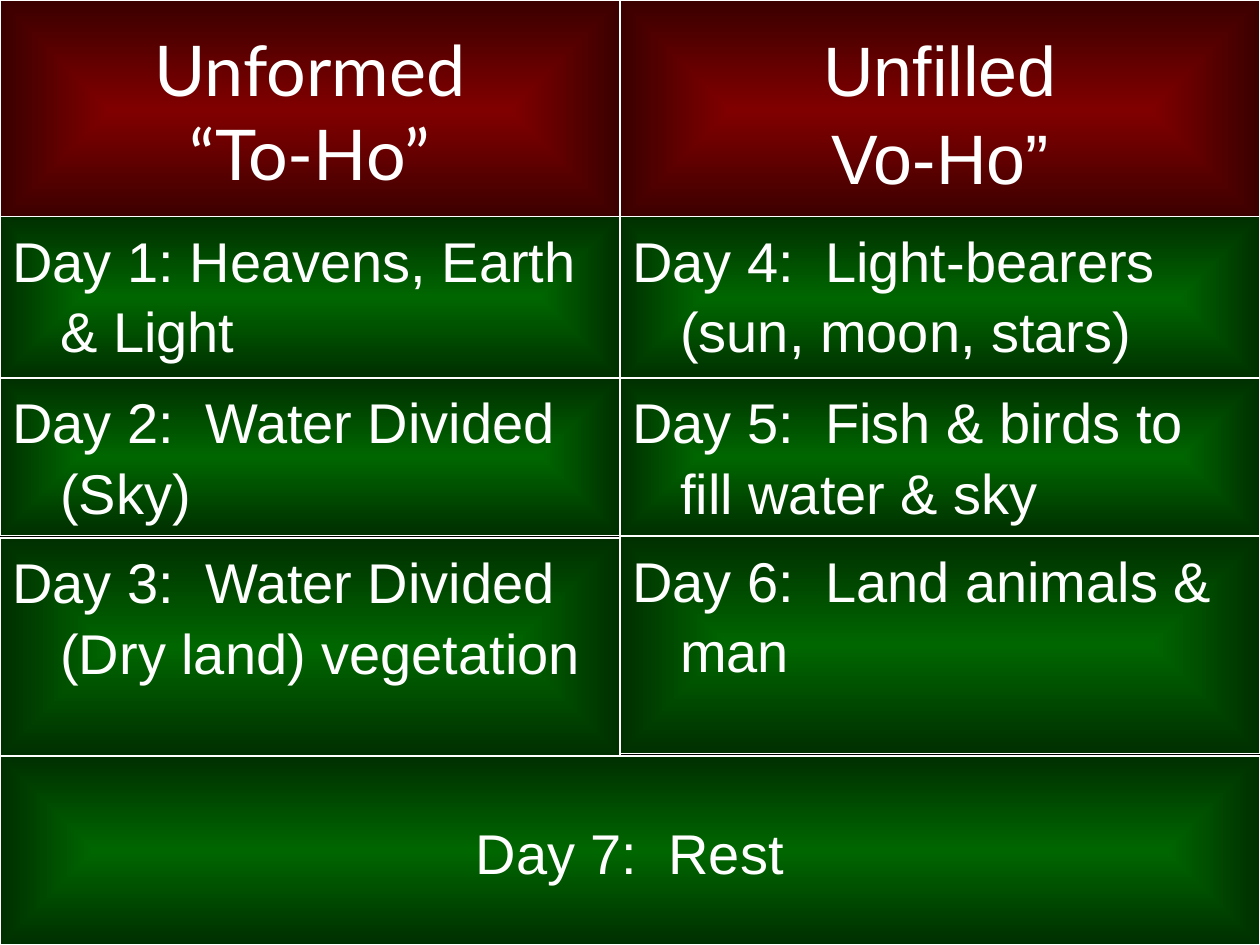
from dataclasses import dataclass

from lxml.etree import SubElement
from pptx import Presentation
from pptx.dml.color import RGBColor as RGB
from pptx.enum.shapes import MSO_SHAPE as SHAPE
from pptx.enum.text import MSO_ANCHOR as ANCHOR, MSO_AUTO_SIZE as AUTO, PP_ALIGN as ALIGN
from pptx.oxml.ns import qn
from pptx.util import Inches, Pt


@dataclass(frozen=True)
class Theme:
    text: RGB = RGB(0xFF, 0xFF, 0xFF)
    back: RGB = RGB(0x00, 0x00, 0x00)
    red: tuple = (RGB(0x80, 0x00, 0x00), RGB(0x3B, 0x00, 0x00))
    green: tuple = (RGB(0x00, 0x66, 0x00), RGB(0x00, 0x2F, 0x00))
    head_font: str = "Lato"
    font: str = "Arial"
    head_size: int = 40
    body_size: int = 32
    line: float = 0.75
    indent: float = 0.38


T = Theme()
WIDTH, HEIGHT = 10, 7.5
SPLIT = 4.92  # boundary between the two columns
COLUMNS = [(0, SPLIT), (SPLIT, WIDTH - SPLIT)]
HEAD_HEIGHT = 1.75
REST_TOP = 6

# Each row: (top, height, text) for the left and the right column
DAYS = [
    [(1.72, 1.28, "Day 1: Heavens, Earth & Light"),
     (1.72, 1.3, "Day 4:  Light-bearers (sun, moon, stars)")],
    [(3, 1.25, "Day 2:  Water Divided (Sky)"),
     (3, 1.25, "Day 5:  Fish & birds to fill water & sky")],
    [(4.27, 1.73, "Day 3:  Water Divided (Dry land) vegetation"),
     (4.26, 1.72, "Day 6:  Land animals & man")],
]


def style_box(sp, box, colors):
    """Place a shape and give it a centred gradient and a thin outline."""
    sp.left, sp.top, sp.width, sp.height = (Inches(v) for v in box)
    sp.shadow.inherit = False
    sp.fill.gradient()
    for stop, color in zip(sp.fill.gradient_stops, colors):
        stop.color.rgb = color
    grad = sp.fill._xPr.find(qn("a:gradFill"))
    grad.remove(grad.find(qn("a:lin")))
    focus = SubElement(grad, qn("a:path"), path="shape")
    SubElement(focus, qn("a:fillToRect"), l="50000", t="50000", r="50000", b="50000")
    sp.line.color.rgb = T.text
    sp.line.width = Pt(T.line)


def write(sp, text, size=T.body_size, font=T.font, align=ALIGN.LEFT,
          anchor=ANCHOR.TOP, indent=0, spacing=1.05):
    tf = sp.text_frame
    tf.word_wrap = True
    tf.auto_size = AUTO.NONE
    tf.vertical_anchor = anchor
    tf.text = text
    for p in tf.paragraphs:
        p.alignment = align
        p.line_spacing = spacing
        p.space_before = Pt(0)
        if indent:
            pPr = p._p.get_or_add_pPr()
            pPr.set("marL", str(Inches(indent)))
            pPr.set("indent", str(-Inches(indent)))
        for r in p.runs:
            r.font.size = Pt(size)
            r.font.name = font
            r.font.color.rgb = T.text


def add_box(slide, box, colors):
    sp = slide.shapes.add_shape(SHAPE.RECTANGLE, 0, 0, 0, 0)
    style_box(sp, box, colors)
    return sp


def add_headings(slide, height):
    (left, left_w), (right, right_w) = COLUMNS
    heading = dict(size=T.head_size, align=ALIGN.CENTER, anchor=ANCHOR.MIDDLE)
    title = slide.shapes.title
    style_box(title, (left, 0, left_w, height), T.red)
    write(title, "Unformed\v“To-Ho”", font=T.head_font, spacing=1.0, **heading)
    sp = add_box(slide, (right, 0, right_w, height), T.red)
    write(sp, "Unfilled\nVo-Ho”", **heading)


def add_days(slide, rows):
    for row in rows:
        for (left, width), (top, height, text) in zip(COLUMNS, row):
            sp = add_box(slide, (left, top, width, height), T.green)
            write(sp, text, indent=T.indent)


def add_rest(slide, box):
    sp = add_box(slide, box, T.green)
    write(sp, "Day 7:  Rest", align=ALIGN.CENTER, anchor=ANCHOR.MIDDLE, indent=T.indent)


def main():
    prs = Presentation()
    prs.slide_width, prs.slide_height = Inches(WIDTH), Inches(HEIGHT)
    slide = prs.slides.add_slide(prs.slide_layouts[5])  # title only
    slide.background.fill.solid()
    slide.background.fill.fore_color.rgb = T.back

    add_headings(slide, HEAD_HEIGHT)
    add_days(slide, DAYS)
    add_rest(slide, (0, REST_TOP, WIDTH, HEIGHT - REST_TOP))
    prs.save("out.pptx")


if __name__ == "__main__":
    main()
